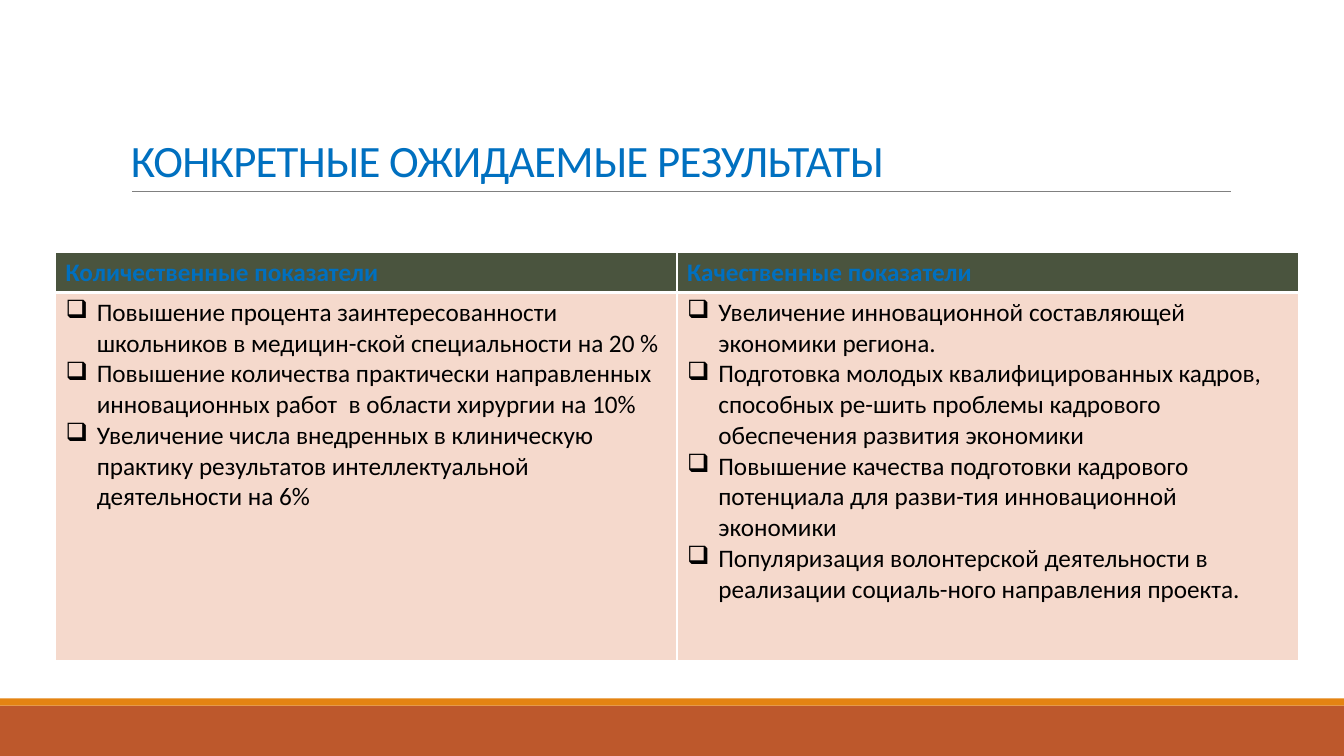
from lxml.etree import SubElement
from pptx import Presentation
from pptx.dml.color import RGBColor
from pptx.enum.shapes import MSO_CONNECTOR, MSO_SHAPE
from pptx.enum.text import MSO_ANCHOR
from pptx.oxml.ns import qn
from pptx.util import Inches, Pt

WIDTH, HEIGHT = 13.33, 7.5
FONT = "Calibri"
BLUE, BLACK, WHITE, GREY = "0070C0", "000000", "FFFFFF", "808080"
RUST, ORANGE, OLIVE, PEACH = "BD582C", "E48312", "4A543E", "F5D9CC"
BULLET_INDENT = Inches(0.31)

TITLE = "КОНКРЕТНЫЕ ОЖИДАЕМЫЕ РЕЗУЛЬТАТЫ"
RESULTS = {
    "Количественные показатели": [
        "Повышение процента заинтересованности школьников в медицин-ской специальности на 20 %",
        "Повышение количества практически направленных инновационных работ  в области хирургии на 10%",
        "Увеличение числа внедренных в клиническую практику результатов "
        "интеллектуальной деятельности на 6%",
    ],
    "Качественные показатели": [
        "Увеличение инновационной составляющей экономики региона.",
        "Подготовка молодых квалифицированных кадров, способных ре-шить проблемы "
        "кадрового обеспечения развития экономики",
        "Повышение качества подготовки кадрового потенциала для разви-тия инновационной экономики",
        "Популяризация волонтерской деятельности в реализации социаль-ного направления проекта.",
    ],
}


def color(value):
    return RGBColor.from_string(value)


def style(paragraph, size, value, bold=False):
    font = paragraph.font
    font.name, font.size, font.bold = FONT, Pt(size), bold
    font.color.rgb = color(value)


def add_footer(slide, left, top, width, height):
    """Thin orange stripe over a rust band."""
    stripe = 0.07
    for offset, depth, fill in ((stripe, height - stripe, RUST), (0, stripe, ORANGE)):
        band = slide.shapes.add_shape(MSO_SHAPE.RECTANGLE, Inches(left), Inches(top + offset),
                                      Inches(width), Inches(depth))
        band.shadow.inherit = False
        band.fill.solid()
        band.fill.fore_color.rgb = color(fill)
        band.line.fill.background()


def add_title(slide, left, top, width, height):
    """Title standing on a thin rule."""
    base = Inches(top + height)
    rule = slide.shapes.add_connector(MSO_CONNECTOR.STRAIGHT, Inches(left + 0.11), base,
                                      Inches(left + width + 0.01), base)
    rule.line.color.rgb = color(GREY)
    rule.line.width = Pt(0.5)
    SubElement(rule.element.spPr, qn("a:effectLst"))

    box = slide.shapes.add_textbox(Inches(left), Inches(top), Inches(width), Inches(height))
    frame = box.text_frame
    frame.word_wrap = True
    frame.vertical_anchor = MSO_ANCHOR.BOTTOM
    paragraph = frame.paragraphs[0]
    paragraph.line_spacing = 0.85
    span = paragraph.add_run()
    span.text = TITLE
    span.font.name = FONT
    style(paragraph, 32, BLUE)
    span.font.size = Pt(32)
    span.font.color.rgb = color(BLUE)
    span.font._element.set("spc", "-50")


def set_borders(cell, **widths):
    properties = cell._tc.get_or_add_tcPr()
    for side, width in widths.items():
        line = SubElement(properties, qn(f"a:ln{side}"), w=str(Pt(width)))
        fill = SubElement(line, qn("a:solidFill"))
        SubElement(fill, qn("a:srgbClr"), val=WHITE)


def fill_cell(cell, texts, fill, value, bold=False, bullets=False):
    cell.fill.solid()
    cell.fill.fore_color.rgb = color(fill)
    cell.text = "\n".join(texts)
    for paragraph in cell.text_frame.paragraphs:
        style(paragraph, 18, value, bold)
        if bullets:
            properties = paragraph._p.get_or_add_pPr()
            properties.set("marL", str(BULLET_INDENT))
            properties.set("indent", str(-BULLET_INDENT))
            bullet = SubElement(properties, qn("a:buChar"), char="❑")
            properties.insert(0, bullet)


def add_results(slide, left, top, width, height):
    """One column per group: a header over a bulleted list."""
    header = 0.4
    table = slide.shapes.add_table(2, len(RESULTS), Inches(left), Inches(top),
                                   Inches(width), Inches(height)).table
    table.rows[0].height = Inches(header)
    table.rows[1].height = Inches(height - header)
    for index, (heading, items) in enumerate(RESULTS.items()):
        table.columns[index].width = Inches(width / len(RESULTS))
        head, body = table.cell(0, index), table.cell(1, index)
        set_borders(head, L=1, R=1, T=1, B=3)
        set_borders(body, L=1, R=1, T=3, B=1)
        fill_cell(head, [heading], OLIVE, BLUE, bold=True)
        fill_cell(body, items, PEACH, BLACK, bullets=True)


def main():
    deck = Presentation()
    deck.slide_width, deck.slide_height = Inches(WIDTH), Inches(HEIGHT)
    slide = deck.slides.add_slide(deck.slide_layouts[6])
    add_footer(slide, 0, 6.93, WIDTH, HEIGHT - 6.93)
    add_title(slide, 1.2, 0.31, 11, 1.59)
    add_results(slide, 0.55, 2.5, 12.33, 4.05)
    deck.save("out.pptx")


if __name__ == "__main__":
    main()
